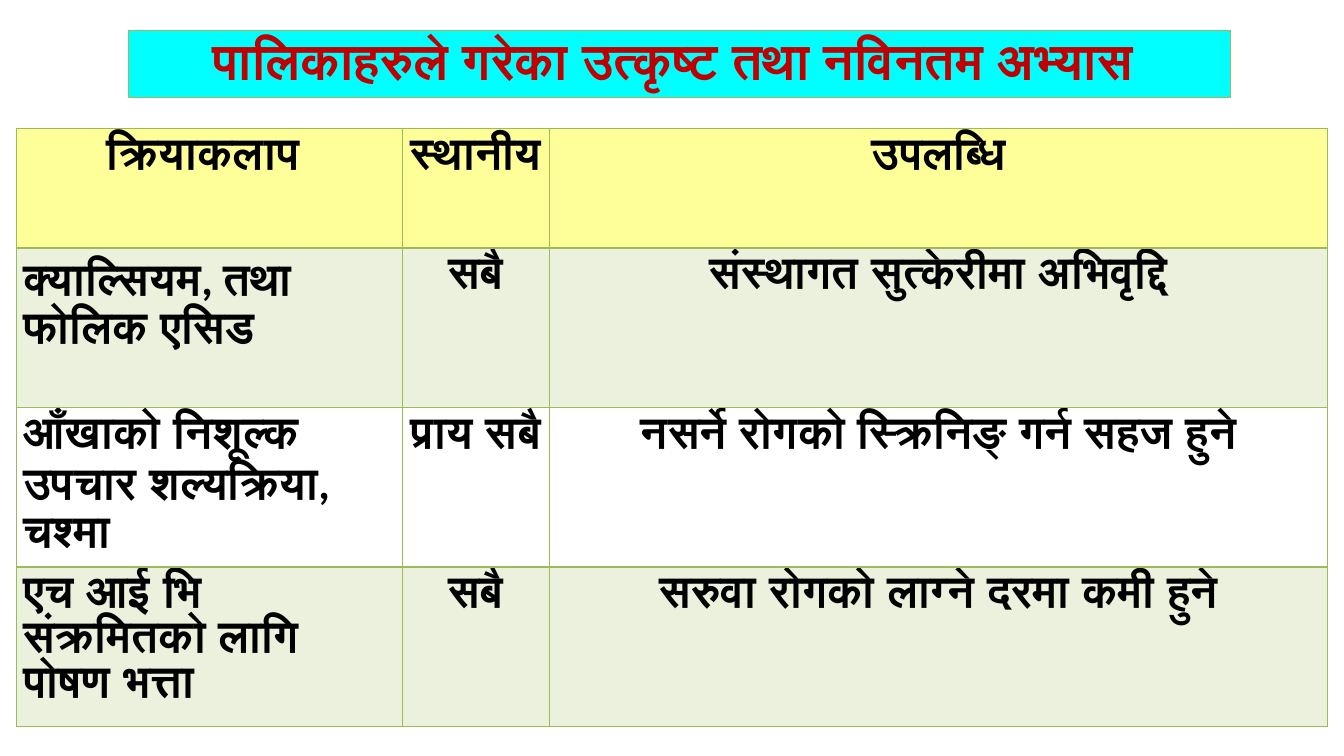
"""Builds the slide on good practices of the municipalities."""
import pptx
import pptx.dml.color
import pptx.enum.text
import pptx.oxml
import pptx.oxml.ns
import pptx.util
from lxml import etree

Pt = pptx.util.Pt
ALIGN = pptx.enum.text.PP_ALIGN
ANCHOR = pptx.enum.text.MSO_ANCHOR
QN = pptx.oxml.ns.qn

HUES = {"cyan": "00FFFF", "red": "C00000", "black": "000000",
        "green": "9BBB59", "yellow": "FFFF99"}
WIDTHS = [276, 105, 556]
HEIGHTS = [85, 114, 114, 114]
ROWS = [
    ["क्रियाकलाप ", "स्थानीय", "उपलब्धि"],
    ["क्याल्सियम, तथा फोलिक एसिड", "सबै", "संस्थागत सुत्केरीमा अभिवृद्दि"],
    ["आँखाको निशूल्क उपचार शल्यक्रिया, चश्मा", "प्राय सबै",
     "नसर्ने रोगको स्क्रिनिङ् गर्न सहज हुने"],
    ["एच आई भि संक्रमितको लागि पोषण भत्ता", "सबै",
     "सरुवा रोगको लाग्ने दरमा कमी हुने"],
]


def color(name):
    return pptx.dml.color.RGBColor.from_string(HUES[name])


def write(frame, text, size=32, hue="black", align=ALIGN.CENTER, space=None):
    para = frame.paragraphs[0]
    para.alignment = align
    para.line_spacing = space
    run = para.add_run()
    run.text = text
    run.font.name = "Calibri"
    run.font.size = Pt(size)
    run.font.bold = True
    run.font.color.rgb = color(hue)


def paint(fill, hue):
    fill.solid()
    fill.fore_color.rgb = color(hue)


def edge(cell, sides):
    props = cell._tc.get_or_add_tcPr()
    for spot, (side, width) in enumerate(sides.items()):
        line = etree.Element(QN("a:ln" + side), w=str(Pt(width)))
        solid = etree.SubElement(line, QN("a:solidFill"))
        etree.SubElement(solid, QN("a:srgbClr"), val=HUES["green"])
        props.insert(spot, line)


def shade(cell, row):
    if row == 0:
        paint(cell.fill, "yellow")
    elif row % 2:
        paint(cell.fill, "green")
        tint = cell._tc.tcPr.find(".//" + QN("a:srgbClr"))
        etree.SubElement(tint, QN("a:alpha"), val="20000")
    else:
        cell.fill.background()


def add_title(slide, text):
    title = slide.shapes.title
    title.left, title.top = Pt(92), Pt(21.5)
    title.width, title.height = Pt(787), Pt(48)
    paint(title.fill, "cyan")
    title.line.color.rgb = color("green")
    title.line.width = Pt(0.5)
    frame = title.text_frame
    frame.word_wrap = True
    frame.auto_size = pptx.enum.text.MSO_AUTO_SIZE.NONE
    frame.vertical_anchor = ANCHOR.MIDDLE
    write(frame, text, size=36, hue="red", space=0.9)


def add_grid(slide):
    table = slide.shapes.add_table(
        len(ROWS), len(WIDTHS), Pt(11.5), Pt(92),
        Pt(sum(WIDTHS)), Pt(sum(HEIGHTS))).table
    table.horz_banding = False
    for col, width in zip(table.columns, WIDTHS):
        col.width = Pt(width)
    for row, height in zip(table.rows, HEIGHTS):
        row.height = Pt(height)
    for row, texts in enumerate(ROWS):
        for col, text in enumerate(texts):
            cell = table.cell(row, col)
            cell.margin_left = cell.margin_right = Pt(5)
            cell.margin_top = cell.margin_bottom = Pt(3.6)
            shade(cell, row)
            edge(cell, {"L": 1, "R": 1, "T": 2 if row == 1 else 1,
                        "B": 2 if row == 0 else 1})
            left = row > 0 and col == 0
            write(cell.text_frame, text,
                  align=ALIGN.LEFT if left else ALIGN.CENTER)


def main():
    deck = pptx.Presentation()
    deck.slide_width, deck.slide_height = Pt(960), Pt(540)
    slide = deck.slides.add_slide(deck.slide_layouts[5])
    add_title(slide, "पालिकाहरुले गरेका उत्कृष्ट तथा नविनतम अभ्यास ")
    add_grid(slide)
    deck.save("out.pptx")


if __name__ == "__main__":
    main()
